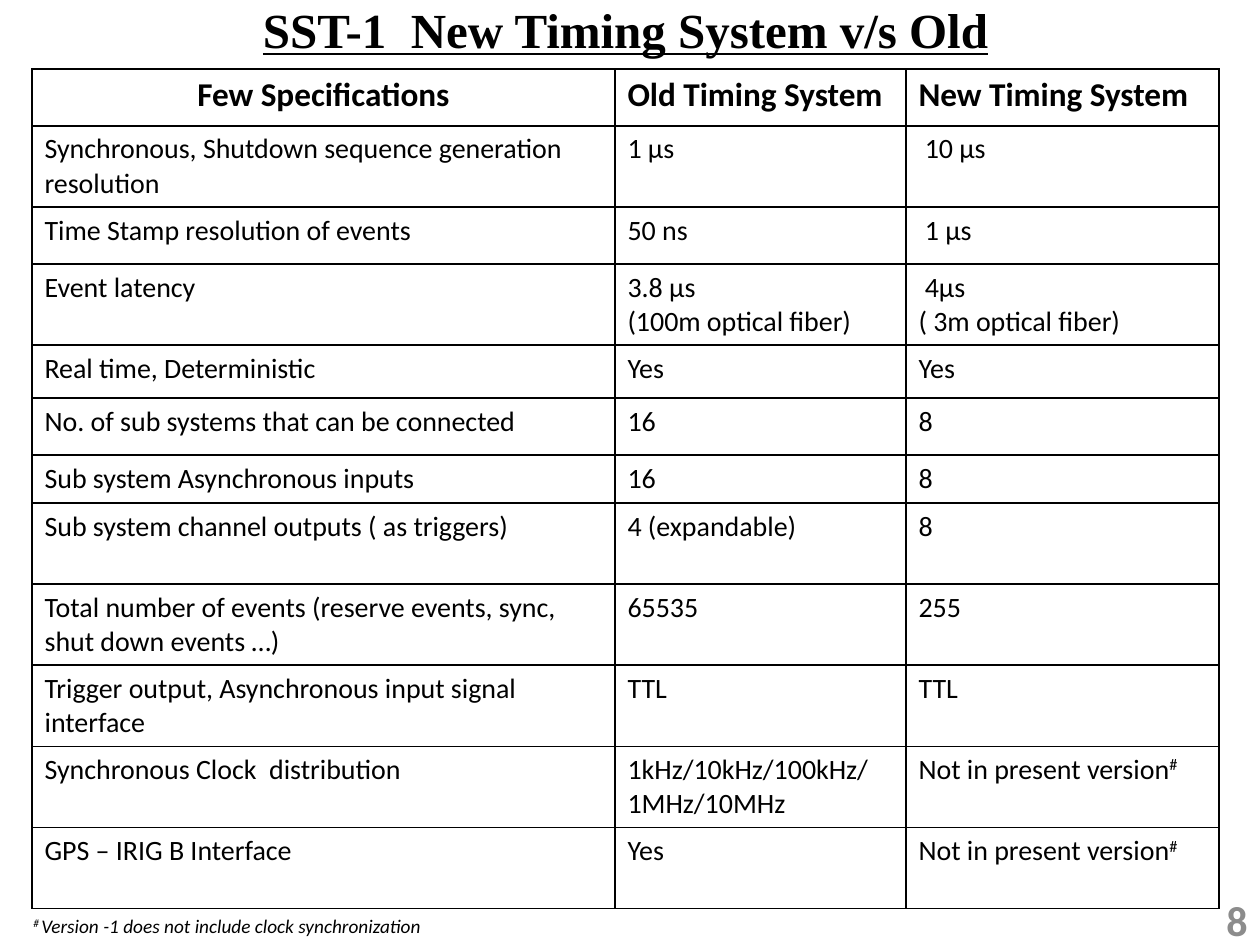
import pptx
import pptx.dml.color
import pptx.enum.text
import pptx.oxml
import pptx.oxml.ns
import pptx.util

RGB = pptx.dml.color.RGBColor
ALIGN = pptx.enum.text.PP_ALIGN
ANCHOR = pptx.enum.text.MSO_ANCHOR

BLACK = RGB(0, 0, 0)
WHITE = RGB(255, 255, 255)
GREY = RGB(0x8C, 0x8C, 0x8C)

SCALE = pptx.util.Inches(10) / 1260

HEAD = ["Few Specifications", "Old Timing System", "New Timing System"]
ROWS = [
    ["Synchronous, Shutdown sequence generation resolution", "1 µs", " 10 µs"],
    ["Time Stamp resolution of events", "50 ns", " 1 µs"],
    ["Event latency", "3.8 µs\n(100m optical fiber)", " 4µs\n( 3m optical fiber)"],
    ["Real time, Deterministic", "Yes", "Yes"],
    ["No. of sub systems that can be connected", "16", "8"],
    ["Sub system Asynchronous inputs", "16", "8"],
    ["Sub system channel outputs ( as triggers)", "4 (expandable)", "8"],
    ["Total number of events (reserve events, sync, shut down events …)",
     "65535", "255"],
    ["Trigger output, Asynchronous input signal interface", "TTL", "TTL"],
    ["Synchronous Clock  distribution", "1kHz/10kHz/100kHz/1MHz/10MHz",
     "Not in present version#"],
    ["GPS – IRIG B Interface", "Yes", "Not in present version#"],
]
WIDTHS = [583, 291, 313]
HEIGHTS = [57, 81, 57, 81, 53, 57, 48] + [81] * 5


def px(size):
    return pptx.util.Emu(round(size * SCALE))


def write(frame, text, size=16, font="Calibri", color=BLACK, bold=False,
          italic=False, under=False, align=ALIGN.LEFT, space=None, mark="#"):
    """Fill a text frame, one paragraph a line, raising each mark."""
    frame.word_wrap = True
    for i, line in enumerate(text.split("\n")):
        para = frame.add_paragraph() if i else frame.paragraphs[0]
        para.alignment = align
        para.line_spacing = space
        for part in line.partition(mark):
            if not part:
                continue
            run = para.add_run()
            run.text = part
            face = run.font
            face.name, face.size = font, pptx.util.Pt(size)
            face.bold, face.italic, face.underline = bold, italic, under
            face.color.rgb = color
            if part == mark:
                run._r.get_or_add_rPr().set("baseline", "30000")


def border(cell, color=BLACK, width=1):
    props = cell._tc.get_or_add_tcPr()
    for i, side in enumerate(("lnL", "lnR", "lnT", "lnB")):
        props.insert(i, pptx.oxml.parse_xml(
            f'<a:{side} {pptx.oxml.ns.nsdecls("a")} w="{pptx.util.Pt(width)}">'
            f'<a:solidFill><a:srgbClr val="{color}"/></a:solidFill></a:{side}>'))


class Deck:
    """Holds the table style and the current slide."""

    fill = WHITE
    line = BLACK

    def __init__(self, wide, high):
        self.file = pptx.Presentation()
        self.file.slide_width, self.file.slide_height = px(wide), px(high)
        self.slide = self.file.slides.add_slide(self.file.slide_layouts[5])

    def title(self, text, box, **form):
        shape = self.slide.shapes.title
        shape.left, shape.top, shape.width, shape.height = map(px, box)
        frame = shape.text_frame
        frame.auto_size = pptx.enum.text.MSO_AUTO_SIZE.NONE
        frame.vertical_anchor = ANCHOR.TOP
        write(frame, text, **form)

    def text(self, text, box, anchor=ANCHOR.TOP, **form):
        frame = self.slide.shapes.add_textbox(*map(px, box)).text_frame
        frame.vertical_anchor = anchor
        write(frame, text, **form)

    def table(self, left, top, head, rows, widths, heights):
        box = (left, top, sum(widths), sum(heights))
        grid = self.slide.shapes.add_table(
            len(heights), len(widths), *map(px, box)).table
        grid.first_row = grid.horz_banding = False
        for col, width in zip(grid.columns, widths):
            col.width = px(width)
        for row, height in zip(grid.rows, heights):
            row.height = px(height)
        for r, texts in enumerate([head] + rows):
            for c, text in enumerate(texts):
                cell = grid.cell(r, c)
                cell.fill.solid()
                cell.fill.fore_color.rgb = self.fill
                border(cell, self.line)
                first = r == 0
                write(cell.text_frame, text, size=19 if first else 16, bold=first,
                      align=ALIGN.CENTER if first and c == 0 else ALIGN.LEFT)


def main():
    deck = Deck(1260, 945)
    deck.table(32, 69, HEAD, ROWS, WIDTHS, HEIGHTS)
    deck.title("SST-1  New Timing System v/s Old", (32, 0, 1187, 67), size=28,
               font="Times New Roman", bold=True, under=True,
               align=ALIGN.CENTER, space=0.9)
    deck.text("8", (966, 895, 294, 50), anchor=ANCHOR.MIDDLE, size=24,
              color=GREY, bold=True, align=ALIGN.RIGHT)
    deck.text("# Version -1 does not include clock synchronization",
              (21, 908, 693, 37), size=11, italic=True, mark="# ")
    deck.file.save("out.pptx")


if __name__ == "__main__":
    main()
